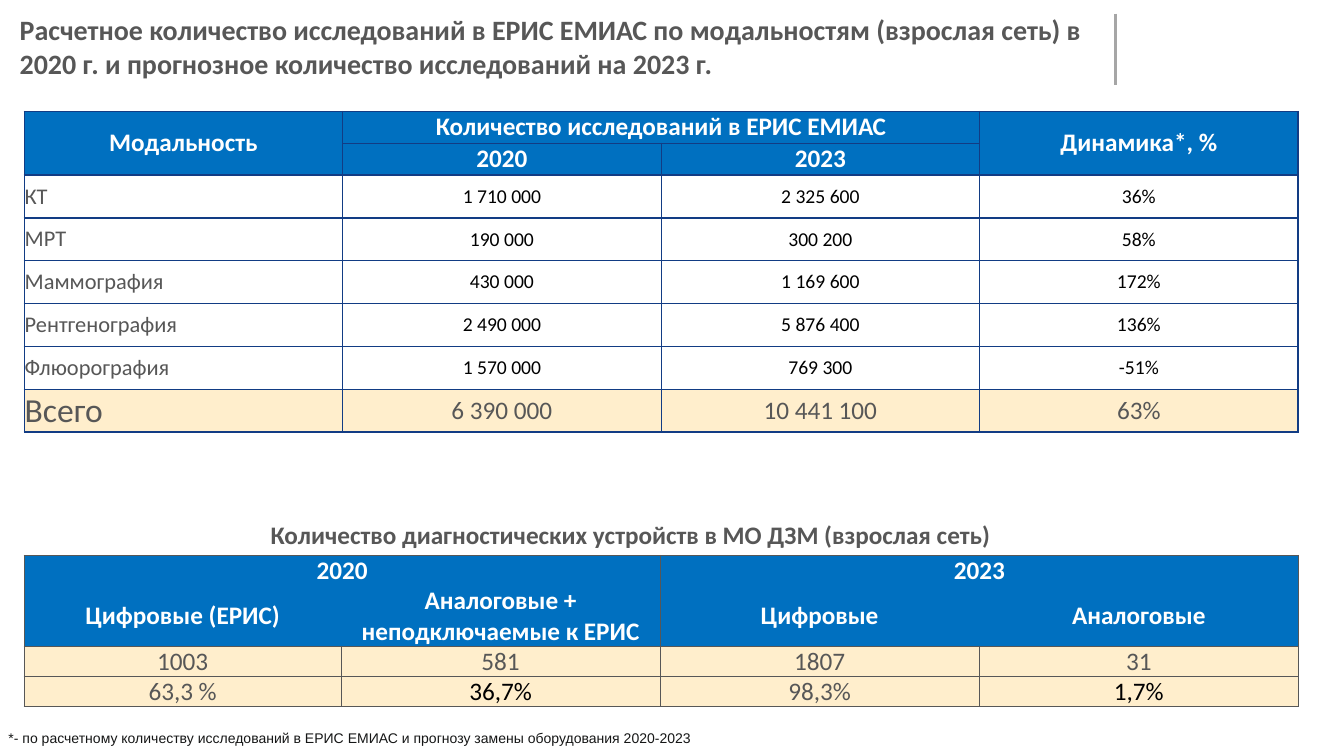
from lxml.etree import SubElement
from pptx import Presentation
from pptx.dml.color import RGBColor
from pptx.enum.shapes import MSO_CONNECTOR as Conn
from pptx.enum.text import MSO_ANCHOR as Anc, MSO_AUTO_SIZE as Auto, PP_ALIGN as Al
from pptx.oxml.ns import qn
from pptx.util import Inches, Pt

HUES = {"blue": "0070C0", "navy": "123C84", "cream": "FFEECC", "gray": "575757",
        "rule": "A6A6A6", "ink": "151616", "black": "000000", "white": "FFFFFF"}

TITLE = ("Расчетное количество исследований в ЕРИС ЕМИАС по модальностям (взрослая сеть) "
         "в 2020 г. и прогнозное количество исследований на 2023 г.")
UNITS = "Количество диагностических устройств в МО ДЗМ (взрослая сеть)"
NOTE = ("*- по расчетному количеству исследований в ЕРИС ЕМИАС "
        "и прогнозу замены оборудования 2020-2023")

STUDIES = [
    ("Модальность", "Количество исследований в ЕРИС ЕМИАС", "", "Динамика*, %"),
    ("", "2020", "2023", ""),
    ("КТ", "1 710 000", "2 325 600", "36%"),
    ("МРТ", "190 000", "300 200", "58%"),
    ("Маммография", "430 000", "1 169 600", "172%"),
    ("Рентгенография", "2 490 000", "5 876 400", "136%"),
    ("Флюорография", "1 570 000", "769 300", "-51%"),
    ("Всего", "6 390 000", "10 441 100", "63%"),
]
DEVICES = [
    ("2020", "", "2023", ""),
    ("Цифровые (ЕРИС)", "Аналоговые + неподключаемые к ЕРИС", "Цифровые", "Аналоговые"),
    ("1003", "581", "1807", "31"),
    ("63,3 %", "36,7%", "98,3%", "1,7%"),
]


def rgb(hue):
    """Return the colour of a named hue."""
    return RGBColor.from_string(HUES[hue])


def style(para, size, hue, bold=False, align=Al.LEFT, face="Calibri"):
    """Set the font and alignment of a paragraph."""
    font = para.font
    font.name, font.size, font.bold = face, Pt(size), bold
    font.color.rgb = rgb(hue)
    para.alignment = align


def label(slide, text, box, size, hue, bold=False, face="Calibri"):
    """Add a one-line text box."""
    shape = slide.shapes.add_textbox(*map(Inches, box))
    frame = shape.text_frame
    frame.margin_left = frame.margin_right = Inches(0.1)
    frame.margin_top = frame.margin_bottom = Inches(0.1)
    frame.word_wrap = False
    frame.text = text
    style(frame.paragraphs[0], size, hue, bold, face=face)


def edge(cell, sides, hue):
    """Draw the borders of a cell, hiding the sides not listed."""
    props = cell._tc.get_or_add_tcPr()
    for side in "LRTB":
        line = SubElement(props, qn(f"a:ln{side}"), w=str(Pt(2)))
        if side in sides:
            fill = SubElement(line, qn("a:solidFill"))
            SubElement(fill, qn("a:srgbClr"), val=HUES[hue])
        else:
            SubElement(line, qn("a:noFill"))


def study(row, col):
    """Return size, hue, bold, fill, anchor and sides for the studies table."""
    if row < 2:
        merged = row == 0 and col in (0, 3)
        return 36, "white", True, "blue", Anc.MIDDLE if merged else Anc.BOTTOM, "LRTB"
    if row == 7:
        return 36 if col else 48, "gray", False, "cream", Anc.MIDDLE, "LRTB"
    size, hue = (28, "black") if col else (32, "gray")
    return size, hue, False, None, Anc.MIDDLE, "LRTB"


def device(row, col):
    """Return size, hue, bold, fill, anchor and sides for the devices table."""
    if row < 2:
        sides = "LRT" if row == 0 else "LB" if col % 2 == 0 else "RB"
        return 36, "white", True, "blue", Anc.MIDDLE, sides
    hue = "black" if row == 3 and col % 2 else "gray"
    return 36, hue, False, "cream", Anc.BOTTOM, "LRTB"


def grid(slide, data, top, cols, rows, spans, look, line, pad, lead):
    """Add a table whose cells are styled by the look rule."""
    box = map(Inches, (0.48, top, sum(cols), sum(rows)))
    table = slide.shapes.add_table(len(rows), len(cols), *box).table
    table.first_row = table.horz_banding = False
    for part, width in zip(table.columns, cols):
        part.width = Inches(width)
    for part, height in zip(table.rows, rows):
        part.height = Inches(height)
    for row, texts in enumerate(data):
        for col, text in enumerate(texts):
            size, hue, bold, fill, anchor, sides = look(row, col)
            cell = table.cell(row, col)
            edge(cell, sides, line)
            if fill:
                cell.fill.solid()
                cell.fill.fore_color.rgb = rgb(fill)
            else:
                cell.fill.background()
            cell.margin_left = cell.margin_right = Inches(pad)
            cell.margin_top = cell.margin_bottom = Inches(pad)
            cell.vertical_anchor = anchor
            cell.text = text
            left = lead and col == 0 and row > 1
            style(cell.text_frame.paragraphs[0], size, hue, bold,
                  Al.LEFT if left else Al.CENTER)
    for start, end in spans:
        table.cell(*start).merge(table.cell(*end))


def main():
    """Build the slide and save it."""
    deck = Presentation()
    deck.slide_width, deck.slide_height = Inches(26.67), Inches(15)
    slide = deck.slides.add_slide(deck.slide_layouts[5])

    rule = slide.shapes.add_connector(
        Conn.STRAIGHT, *map(Inches, (22.14, 0.27, 22.14, 1.68)))
    rule.line.color.rgb, rule.line.width = rgb("rule"), Pt(4)
    SubElement(rule._element.spPr, qn("a:effectLst"))

    title = slide.shapes.title
    title.left, title.top, title.width, title.height = map(
        Inches, (0.29, 0.15, 22.19, 1.44))
    frame = title.text_frame
    frame.text = TITLE
    frame.margin_left = frame.margin_right = Inches(0.1)
    frame.margin_top = frame.margin_bottom = Inches(0.1)
    frame.word_wrap, frame.auto_size = True, Auto.NONE
    frame.vertical_anchor = Anc.TOP
    style(frame.paragraphs[0], 40, "gray", True)

    grid(slide, STUDIES, 2.21, [6.32] * 4, [0.59] * 2 + [0.85] * 6,
         [((0, 0), (1, 0)), ((0, 1), (0, 2)), ((0, 3), (1, 3))],
         study, "navy", 0.01, True)
    label(slide, NOTE, (0.07, 14.38, 13.96, 0.53), 20, "ink", face="Arial")
    grid(slide, DEVICES, 11.02, [6.29, 6.33, 6.33, 6.34], [0.53, 1.14, 0.53, 0.53],
         [((0, 0), (0, 1)), ((0, 2), (0, 3))], device, "gray", 0, False)
    label(slide, UNITS, (5.27, 10.21, 14.5, 0.7), 36, "gray", True)
    deck.save("out.pptx")


if __name__ == "__main__":
    main()
